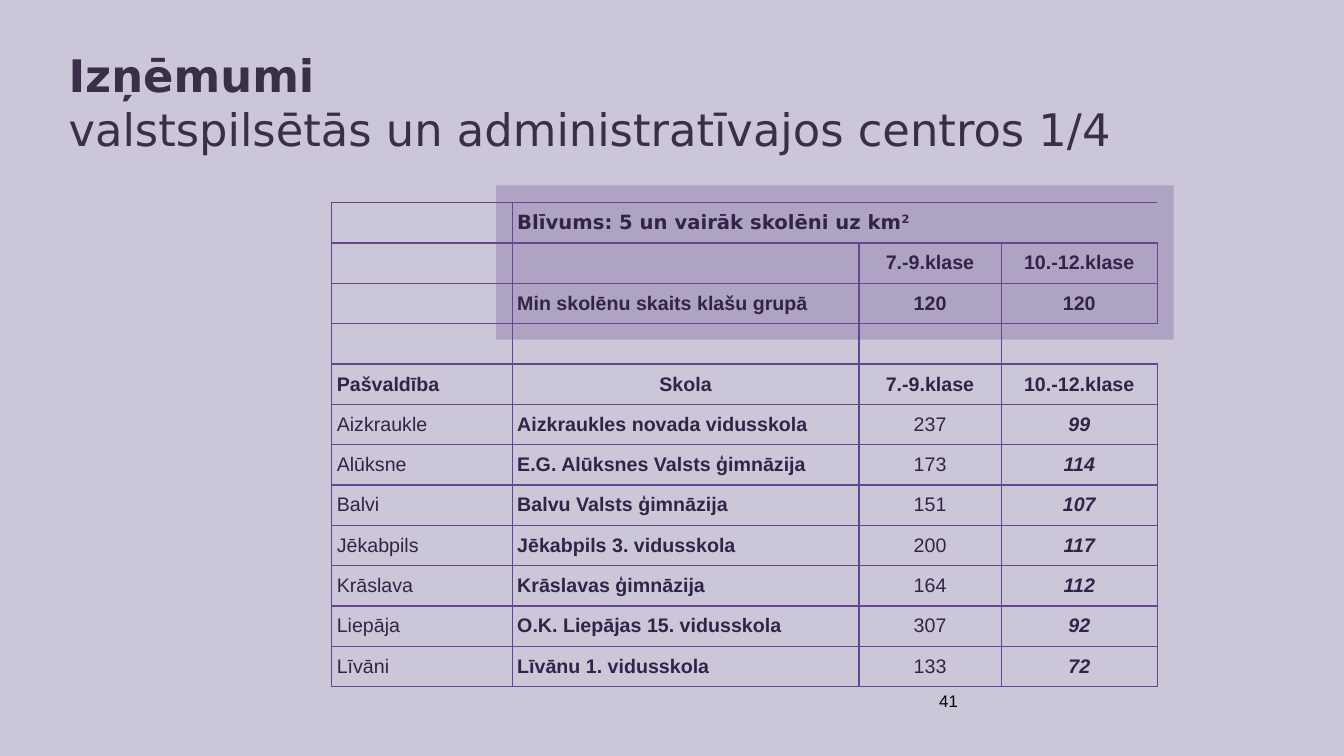
from lxml.etree import SubElement
from pptx import Presentation
from pptx.dml.color import RGBColor
from pptx.enum.shapes import MSO_SHAPE as Shape
from pptx.enum.text import MSO_ANCHOR as Anchor, PP_ALIGN as Align
from pptx.oxml.ns import qn
from pptx.util import Inches, Pt

COLORS = {"background": "CBC7D8", "accent": "664690", "title": "3A2E49",
          "body": "332348", "number": "000000"}
TITLE = ("Izņēmumi", "valstspilsētās un administratīvajos centros 1/4")
PAGE_NUMBER = "41"
GRADES = ("7.-9.klase", "10.-12.klase")
HEADER_ROWS = [
    ("", "Blīvums: 5 un vairāk skolēni uz km", "", ""),
    ("", "", *GRADES),
    ("", "Min skolēnu skaits klašu grupā", "120", "120"),
    ("", "", "", ""),
    ("Pašvaldība", "Skola", *GRADES),
]
SCHOOL_ROWS = [
    ("Aizkraukle", "Aizkraukles novada vidusskola", "237", "99"),
    ("Alūksne", "E.G. Alūksnes Valsts ģimnāzija", "173", "114"),
    ("Balvi", "Balvu Valsts ģimnāzija", "151", "107"),
    ("Jēkabpils", "Jēkabpils 3. vidusskola", "200", "117"),
    ("Krāslava", "Krāslavas ģimnāzija", "164", "112"),
    ("Liepāja", "O.K. Liepājas 15. vidusskola", "307", "92"),
    ("Līvāni", "Līvānu 1. vidusskola", "133", "72"),
]
COLUMN_WIDTHS = (1.79, 3.44, 1.41, 1.55)
ROW_HEIGHT = 0.4
INSET = Inches(0.05)
DENSITY_ROW, GAP_ROW, SCHOOL_HEADING_ROW = 0, 3, 4


def add_span(para, text, size, font, color, bold=False, italic=False):
    span = para.add_run()
    span.text = text
    span.font.size = Pt(size)
    span.font.name = font
    span.font.bold = bold
    span.font.italic = italic
    span.font.color.rgb = RGBColor.from_string(COLORS[color])
    return span


def set_insets(target):
    target.margin_left = target.margin_right = INSET
    target.margin_top = target.margin_bottom = INSET
    target.vertical_anchor = Anchor.MIDDLE


def add_box(page, left, top, width, height):
    box = page.shapes.add_textbox(*map(Inches, (left, top, width, height)))
    box.text_frame.word_wrap = True
    set_insets(box.text_frame)
    return box.text_frame.paragraphs[0]


def set_borders(cell, hidden):
    properties = cell._tc.get_or_add_tcPr()
    for side in "LRTB":
        line = SubElement(properties, qn(f"a:ln{side}"), w=str(Pt(1)))
        if side in hidden:
            SubElement(line, qn("a:noFill"))
        else:
            fill = SubElement(line, qn("a:solidFill"))
            SubElement(fill, qn("a:srgbClr"), val=COLORS["accent"])


def fill_cell(cell, row, column, text):
    is_school = row >= len(HEADER_ROWS)
    open_right = row == DENSITY_ROW and column > 0 or row == GAP_ROW and column == 3
    set_borders(cell, "R" if open_right else "")
    cell.fill.background()
    set_insets(cell)
    if not text:
        return
    para = cell.text_frame.paragraphs[0]
    centered = column > 1 or (row, column) == (SCHOOL_HEADING_ROW, 1)
    para.alignment = Align.CENTER if centered else Align.LEFT
    font = "DejaVu Sans" if row == DENSITY_ROW else "Arial"
    bold = not is_school or column in (1, 3)
    add_span(para, text, 14, font, "body", bold, is_school and column == 3)
    if row == DENSITY_ROW:
        power = add_span(para, "2", 14, font, "body", bold)
        power._r.get_or_add_rPr().set("baseline", "30000")


def add_school_table(page):
    rows = HEADER_ROWS + SCHOOL_ROWS
    frame = page.shapes.add_table(
        len(rows), len(COLUMN_WIDTHS), Inches(3.29), Inches(2.01),
        Inches(sum(COLUMN_WIDTHS)), Inches(ROW_HEIGHT * len(rows)))
    table = frame.table
    table.first_row = table.horz_banding = False
    for column, width in zip(table.columns, COLUMN_WIDTHS):
        column.width = Inches(width)
    for row, texts in enumerate(rows):
        table.rows[row].height = Inches(ROW_HEIGHT)
        for column, text in enumerate(texts):
            fill_cell(table.cell(row, column), row, column, text)
    table.cell(DENSITY_ROW, 1).merge(table.cell(DENSITY_ROW, 3))


def add_highlight(page):
    panel = page.shapes.add_shape(
        Shape.RECTANGLE, *map(Inches, (4.92, 1.84, 6.72, 1.53)))
    panel.shadow.inherit = False
    panel.line.fill.background()
    panel.fill.solid()
    panel.fill.fore_color.rgb = RGBColor.from_string(COLORS["accent"])
    color = panel._element.spPr.find(qn("a:solidFill")).find(qn("a:srgbClr"))
    SubElement(color, qn("a:alpha"), val="28000")


def main():
    deck = Presentation()
    deck.slide_width, deck.slide_height = Inches(13.33), Inches(7.5)
    page = deck.slides.add_slide(deck.slide_layouts[6])
    page.background.fill.solid()
    page.background.fill.fore_color.rgb = RGBColor.from_string(COLORS["background"])

    add_highlight(page)
    title = add_box(page, 0.63, 0.42, 12.18, 1.18)
    add_span(title, TITLE[0], 32, "DejaVu Sans", "title", bold=True)
    title.add_line_break()
    add_span(title, TITLE[1], 32, "DejaVu Sans", "title")
    add_school_table(page)
    number = add_box(page, 6.44, 6.75, 3.11, 0.4)
    number.alignment = Align.RIGHT
    add_span(number, PAGE_NUMBER, 12, "Arial", "number")
    deck.save("out.pptx")


if __name__ == "__main__":
    main()
